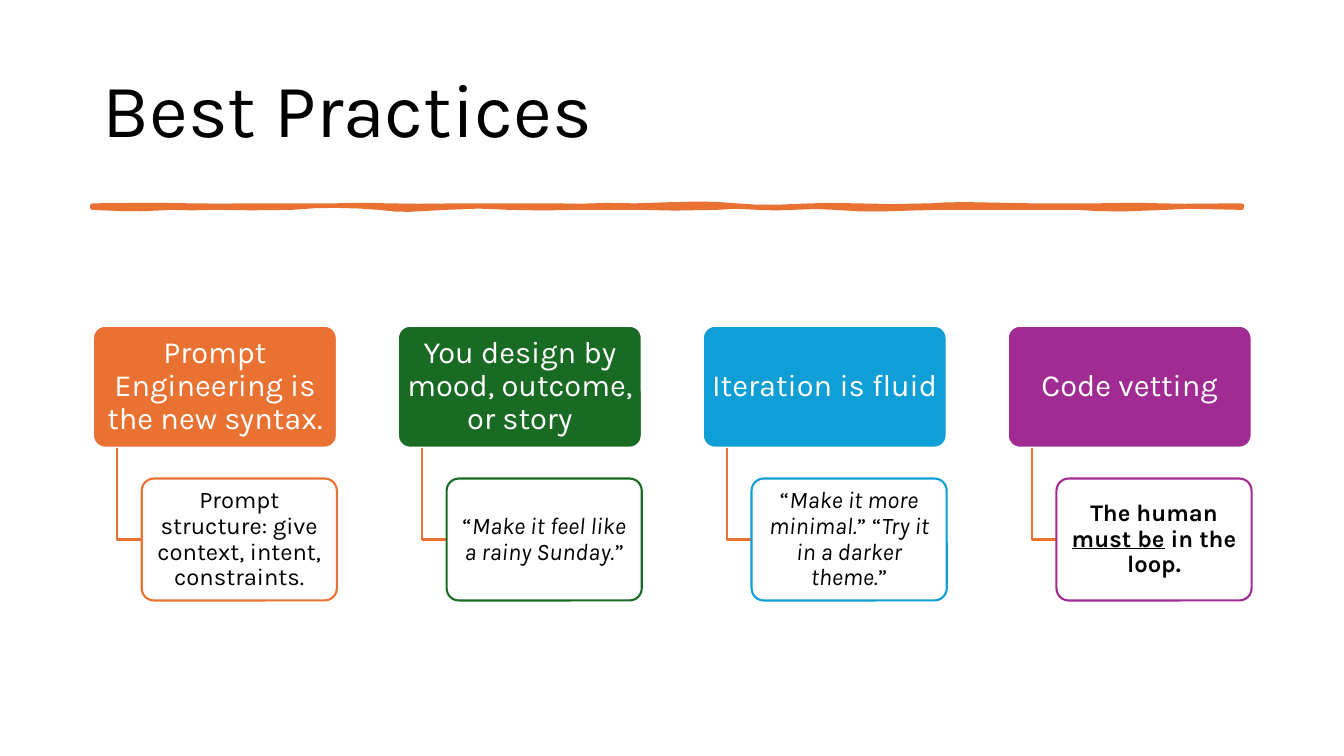
from dataclasses import dataclass

from pptx import Presentation
from pptx.dml.color import RGBColor
from pptx.enum.shapes import MSO_SHAPE
from pptx.enum.text import MSO_ANCHOR, MSO_AUTO_SIZE, PP_ALIGN
from pptx.shapes.autoshape import Shape
from pptx.slide import Slide
from pptx.text.text import TextFrame
from pptx.util import Pt

ROUNDED = MSO_SHAPE.ROUNDED_RECTANGLE
MIDDLE = MSO_ANCHOR.MIDDLE
NO_AUTOFIT = MSO_AUTO_SIZE.NONE
LEFT, CENTER = PP_ALIGN.LEFT, PP_ALIGN.CENTER


@dataclass(frozen=True)
class Theme:
    font: str = "Karla"
    black: str = "000000"
    white: str = "FFFFFF"
    orange: str = "E97132"
    green: str = "196B24"
    blue: str = "0F9ED5"
    purple: str = "A02B93"
    title_size: float = 54
    heading_size: float = 22
    detail_size: float = 17
    outline: float = 1.5
    brush_outline: float = 3.25


@dataclass(frozen=True)
class Span:
    text: str
    bold: bool = False
    italic: bool = False
    underline: bool = False


@dataclass(frozen=True)
class Practice:
    heading: str
    detail: list[Span]
    color: str


@dataclass(frozen=True)
class Box:
    left: float
    top: float
    width: float
    height: float


THEME = Theme()

PRACTICES = [
    Practice("Prompt Engineering is the new syntax.",
             [Span("Prompt structure: give context, intent, constraints.")],
             THEME.orange),
    Practice("You design by mood, outcome, or story",
             [Span("“"), Span("Make it feel like a rainy Sunday.", italic=True),
              Span("”")],
             THEME.green),
    Practice("Iteration is fluid",
             [Span("“"), Span("Make it more minimal.", italic=True), Span("” “"),
              Span("Try it in a darker theme.", italic=True), Span("”")],
             THEME.blue),
    Practice("Code vetting",
             [Span("The human ", bold=True),
              Span("must be", bold=True, underline=True),
              Span(" in the loop.", bold=True)],
             THEME.purple),
]

# Layout of the practice columns
FIRST_LEFT, COLUMN_STEP = 66.4, 217.8
HEADING_TOP, DETAIL_TOP = 232.7, 341.8
HEADING_WIDTH, DETAIL_WIDTH, BOX_HEIGHT = 174.24, 139.4, 87.12
ELBOW_INDENT, DETAIL_INDENT = 17.42, 34.85

# Brush stroke: (x, bulge) along each edge
BRUSH_TOP, BRUSH_BOTTOM = 146.9, 148.3
UPPER_EDGE = [
    (66, 0), (108, -0.4), (137, 0), (158, 0.2), (176, 0), (238, 0),
    (262, -0.4), (276, 0), (298, 0.3), (331, 0), (395, 0), (414, 0.3),
    (424, 0), (433, -0.3), (454, 0), (478, -0.8), (498, -1.3), (512, -1),
    (526, 0), (540, 0.9), (554, 1), (580, 0), (592, -0.3), (611, 0),
    (638, 0.5), (665, 0), (676, -0.7), (690, -0.9), (737, 0), (783, 0),
    (812, -0.4), (829, 0), (846, 0.3), (887, 0),
]
LOWER_EDGE = [
    (66, 0), (85, 0.8), (101, 1), (123, 0), (137, 0.3), (153, 0), (180, 0.3),
    (208, 0), (225, -1.2), (240, -1.4), (256, -1), (271, 0), (282, 1.2),
    (292, 1.4), (318, 0), (342, -0.9), (364, 0), (389, 0.4), (410, 0),
    (457, 0), (482, 0.5), (512, 0), (526, -0.8), (542, 0), (554, 0.4),
    (583, -0.6), (597, 0), (613, 1), (630, 1.1), (668, 0), (769, 0),
    (785, 0.9), (803, 1.1), (832, 0), (850, -0.8), (887, 0),
]


def rgb(color: str) -> RGBColor:
    return RGBColor.from_string(color)


def write(frame: TextFrame, spans: list[Span], *, size: float, color: str,
          align: PP_ALIGN, inset_x: float = 7.2, inset_y: float = 3.6) -> None:
    frame.word_wrap = True
    frame.auto_size = NO_AUTOFIT
    frame.vertical_anchor = MIDDLE
    frame.margin_left = frame.margin_right = Pt(inset_x)
    frame.margin_top = frame.margin_bottom = Pt(inset_y)
    paragraph = frame.paragraphs[0]
    paragraph.alignment = align
    paragraph.line_spacing = 0.9
    for span in spans:
        run = paragraph.add_run()
        run.text = span.text
        font = run.font
        font.name, font.size = THEME.font, Pt(size)
        font.color.rgb = rgb(color)
        font.bold, font.italic = span.bold, span.italic
        font.underline = span.underline


def place(shape: Shape, box: Box) -> None:
    shape.left, shape.top = Pt(box.left), Pt(box.top)
    shape.width, shape.height = Pt(box.width), Pt(box.height)


def paint(shape: Shape, fill: str | None, line: str, width: float) -> None:
    shape.shadow.inherit = False
    if fill is None:
        shape.fill.background()
    else:
        shape.fill.solid()
        shape.fill.fore_color.rgb = rgb(fill)
    shape.line.color.rgb = rgb(line)
    shape.line.width = Pt(width)


def draw_outline(slide: Slide, points: list[tuple[float, float]], *,
                 close: bool, fill: str | None, width: float) -> None:
    corners = [(Pt(x), Pt(y)) for x, y in points]
    builder = slide.shapes.build_freeform(*corners[0])
    builder.add_line_segments(corners[1:], close=close)
    paint(builder.convert_to_shape(), fill, THEME.orange, width)


def draw_card(slide: Slide, box: Box, fill: str, line: str) -> Shape:
    card = slide.shapes.add_shape(ROUNDED, Pt(box.left), Pt(box.top),
                                  Pt(box.width), Pt(box.height))
    card.adjustments[0] = 0.1
    paint(card, fill, line, THEME.outline)
    return card


def draw_practice(slide: Slide, practice: Practice, left: float) -> None:
    heading = draw_card(slide, Box(left, HEADING_TOP, HEADING_WIDTH, BOX_HEIGHT),
                        practice.color, THEME.white)
    write(heading.text_frame, [Span(practice.heading)], size=THEME.heading_size,
          color=THEME.white, align=CENTER, inset_x=3.3, inset_y=2.2)

    # Elbow from the heading down to the detail
    elbow_left, detail_left = left + ELBOW_INDENT, left + DETAIL_INDENT
    detail_middle = DETAIL_TOP + BOX_HEIGHT / 2
    draw_outline(slide, [(elbow_left, HEADING_TOP + BOX_HEIGHT),
                         (elbow_left, detail_middle),
                         (detail_left, detail_middle)],
                 close=False, fill=None, width=THEME.outline)

    detail = draw_card(slide, Box(detail_left, DETAIL_TOP, DETAIL_WIDTH, BOX_HEIGHT),
                       THEME.white, practice.color)
    write(detail.text_frame, practice.detail, size=THEME.detail_size,
          color=THEME.black, align=CENTER, inset_x=2.9, inset_y=1.4)


def main() -> None:
    deck = Presentation()
    deck.slide_width, deck.slide_height = Pt(960), Pt(540)
    slide = deck.slides.add_slide(deck.slide_layouts[5])

    # Title
    title = slide.shapes.title
    place(title, Box(66, 28.8, 828, 104.4))
    write(title.text_frame, [Span("Best Practices")], size=THEME.title_size,
          color=THEME.black, align=LEFT)

    # Brush stroke under the title
    upper = [(x, BRUSH_TOP + bulge) for x, bulge in UPPER_EDGE]
    lower = [(x, BRUSH_BOTTOM + bulge) for x, bulge in LOWER_EDGE]
    draw_outline(slide, upper + lower[::-1], close=True, fill=THEME.orange,
                 width=THEME.brush_outline)

    # Practices
    for column, practice in enumerate(PRACTICES):
        draw_practice(slide, practice, FIRST_LEFT + column * COLUMN_STEP)

    deck.save("out.pptx")


if __name__ == "__main__":
    main()
